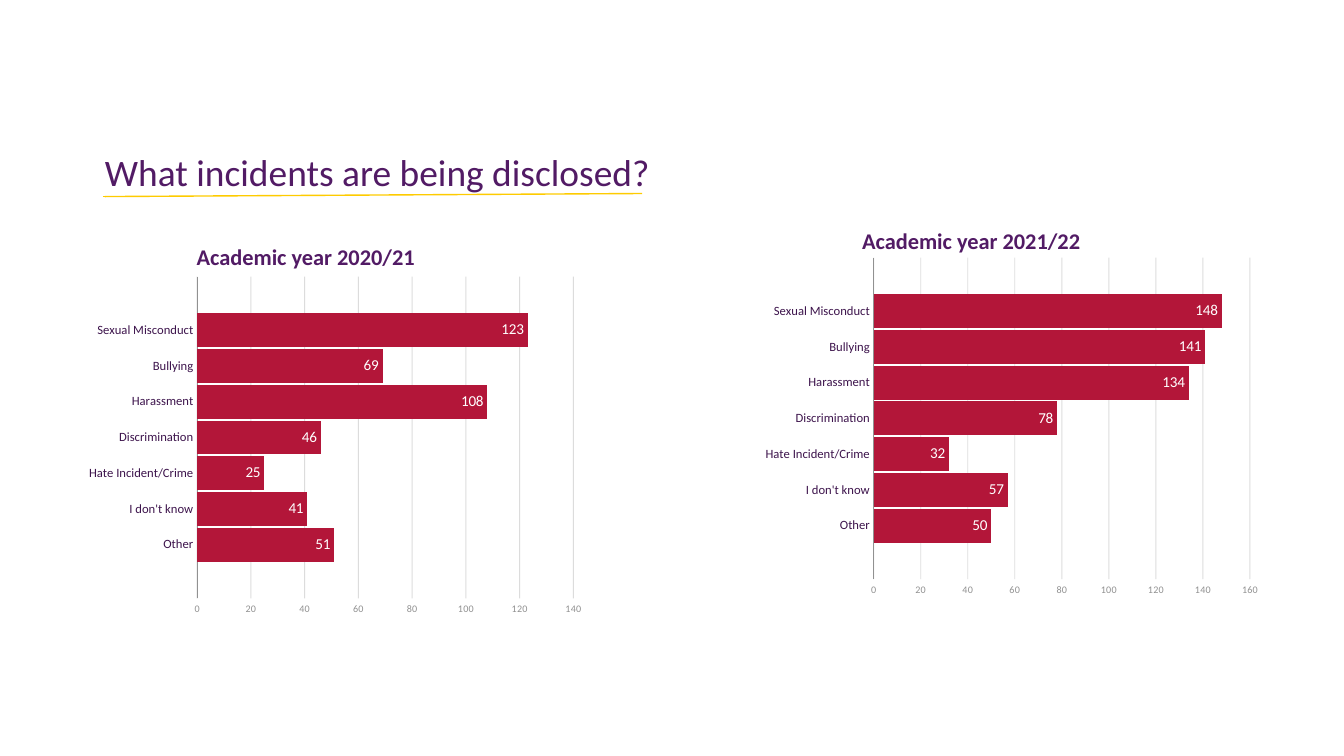
from lxml import etree
from pptx import Presentation
from pptx.chart.data import CategoryChartData
from pptx.dml.color import RGBColor
from pptx.enum.chart import XL_CHART_TYPE, XL_LABEL_POSITION, XL_TICK_MARK
from pptx.enum.shapes import MSO_CONNECTOR, MSO_SHAPE
from pptx.enum.text import MSO_ANCHOR, MSO_AUTO_SIZE, PP_ALIGN
from pptx.oxml import parse_xml
from pptx.oxml.ns import nsdecls, qn
from pptx.util import Inches, Pt

BAR = XL_CHART_TYPE.BAR_CLUSTERED
INSIDE_END = XL_LABEL_POSITION.INSIDE_END
NO_TICK = XL_TICK_MARK.NONE
STRAIGHT = MSO_CONNECTOR.STRAIGHT
RECTANGLE = MSO_SHAPE.RECTANGLE
TOP, MIDDLE = MSO_ANCHOR.TOP, MSO_ANCHOR.MIDDLE
NO_AUTOFIT = MSO_AUTO_SIZE.NONE
LEFT = PP_ALIGN.LEFT

PURPLE, DARK_PURPLE, YELLOW = "521B65", "3D144C", "FECB00"
CRIMSON, GREY, WHITE = "B31639", "919191", "FFFFFF"

INCIDENTS = ["Other", "I don't know", "Hate Incident/Crime", "Discrimination",
             "Harassment", "Bullying", "Sexual Misconduct"]
# Heading, its left and top, chart left and top, axis maximum, values
YEARS = [
    ("Academic year 2020/21", 1.95, 2.41, 0.09, 2.74, 140,
     [51, 41, 25, 46, 108, 69, 123]),
    ("Academic year 2021/22", 8.55, 2.25, 6.8, 2.55, 160,
     [50, 57, 32, 78, 134, 141, 148]),
]
PLOT_BOX = {"x": 0.3, "y": 0, "w": 0.6, "h": 0.85}


def rgb(hex_colour):
    return RGBColor.from_string(hex_colour)


class IncidentSlide:
    font_name = "Calibri"

    def __init__(self, presentation):
        self.slide = presentation.slides.add_slide(presentation.slide_layouts[5])
        self.shapes = self.slide.shapes

    def style_font(self, font, size, colour, bold=False):
        formats = {"name": self.font_name, "size": Pt(size), "bold": bold}
        for name, value in formats.items():
            setattr(font, name, value)
        font.color.rgb = rgb(colour)

    def set_text(self, shape, text, size, insets, anchor, bold=False):
        """Fill a shape with one left-aligned purple line of text."""
        frame = shape.text_frame
        frame.text = text
        formats = dict(zip(("margin_left", "margin_top", "margin_right", "margin_bottom"),
                           map(Inches, insets)))
        formats.update(word_wrap=True, auto_size=NO_AUTOFIT, vertical_anchor=anchor)
        for name, value in formats.items():
            setattr(frame, name, value)
        paragraph = frame.paragraphs[0]
        paragraph.alignment = LEFT
        self.style_font(paragraph.runs[0].font, size, PURPLE, bold)
        return paragraph

    def title(self, text, left, top, width, height):
        title = self.shapes.title
        box = {"left": left, "top": top, "width": width, "height": height}
        for name, value in box.items():
            setattr(title, name, Inches(value))
        self.set_text(title, text, 26.7, (0, 0.07, 0.13, 0.07), TOP).line_spacing = 0.9

    def line(self, x1, y1, x2, y2, width):
        line = self.shapes.add_connector(STRAIGHT, *map(Inches, (x1, y1, x2, y2)))
        line.line.color.rgb = rgb(YELLOW)
        line.line.width = Pt(width)
        etree.SubElement(line.element.spPr, qn("a:effectLst"))

    def heading(self, text, left, top):
        heading = self.shapes.add_shape(
            RECTANGLE, *map(Inches, (left, top, 3.75, 0.27)))
        heading.shadow.inherit = False
        heading.fill.solid()
        heading.fill.fore_color.rgb = rgb(WHITE)
        heading.line.fill.background()
        self.set_text(heading, text, 16, (0, 0, 0, 0), MIDDLE, bold=True)

    def style_axis(self, axis, size, colour):
        axis.major_tick_mark = axis.minor_tick_mark = NO_TICK
        self.style_font(axis.tick_labels.font, size, colour)

    def place_plot(self, chart):
        """Fix the inner plot area as fractions of the chart."""
        plot_area = chart.element.find(".//" + qn("c:plotArea"))
        for layout in plot_area.findall(qn("c:layout")):
            plot_area.remove(layout)
        modes = "".join(f'<c:{side}Mode val="edge"/>' for side in "xy")
        sizes = "".join(f'<c:{side} val="{value}"/>' for side, value in PLOT_BOX.items())
        plot_area.insert(0, parse_xml(
            f'<c:layout {nsdecls("c")}><c:manualLayout>'
            f'<c:layoutTarget val="inner"/>{modes}{sizes}</c:manualLayout></c:layout>'))

    def bar_chart(self, left, top, maximum, counts):
        data = CategoryChartData()
        data.categories = ["", *INCIDENTS, ""]
        data.add_series("Series 1", [None, *counts, None])
        chart = self.shapes.add_chart(
            BAR, *map(Inches, (left, top, 6.22, 3.76)), data).chart
        chart.has_legend = chart.has_title = False
        self.style_font(chart.font, 10, DARK_PURPLE)
        self.place_plot(chart)

        plot = chart.plots[0]
        formats = {"gap_width": 5, "overlap": 100, "vary_by_categories": False,
                   "has_data_labels": True}
        for name, value in formats.items():
            setattr(plot, name, value)
        labels = plot.data_labels
        labels.show_value = True
        labels.position = INSIDE_END
        self.style_font(labels.font, 10.8, WHITE)
        bars = plot.series[0].format.fill
        bars.solid()
        bars.fore_color.rgb = rgb(CRIMSON)

        incidents, scale = chart.category_axis, chart.value_axis
        self.style_axis(incidents, 9, DARK_PURPLE)
        self.style_axis(scale, 7.2, GREY)
        scale.minimum_scale, scale.maximum_scale, scale.major_unit = 0, maximum, 20
        scale.format.line.fill.background()
        for line in (incidents.format.line, scale.major_gridlines.format.line):
            line.color.rgb = rgb(GREY)
            line.width = Pt(0.68)
        gridlines = chart.element.find(".//" + qn("c:majorGridlines"))
        grid_colour = gridlines.find(".//" + qn("a:srgbClr"))
        etree.SubElement(grid_colour, qn("a:alpha")).set("val", "31000")


def main():
    presentation = Presentation()
    presentation.slide_width, presentation.slide_height = Inches(13.33), Inches(7.5)
    page = IncidentSlide(presentation)
    page.line(1.02, 1.95, 1.18, 1.95, 0.75)
    page.title("What incidents are being disclosed?", 1.04, 1.46, 8.75, 0.77)
    page.line(1.04, 1.95, 6.37, 1.92, 1)
    for heading, heading_left, heading_top, left, top, maximum, counts in YEARS:
        page.bar_chart(left, top, maximum, counts)
        page.heading(heading, heading_left, heading_top)
    presentation.save("out.pptx")


if __name__ == "__main__":
    main()
